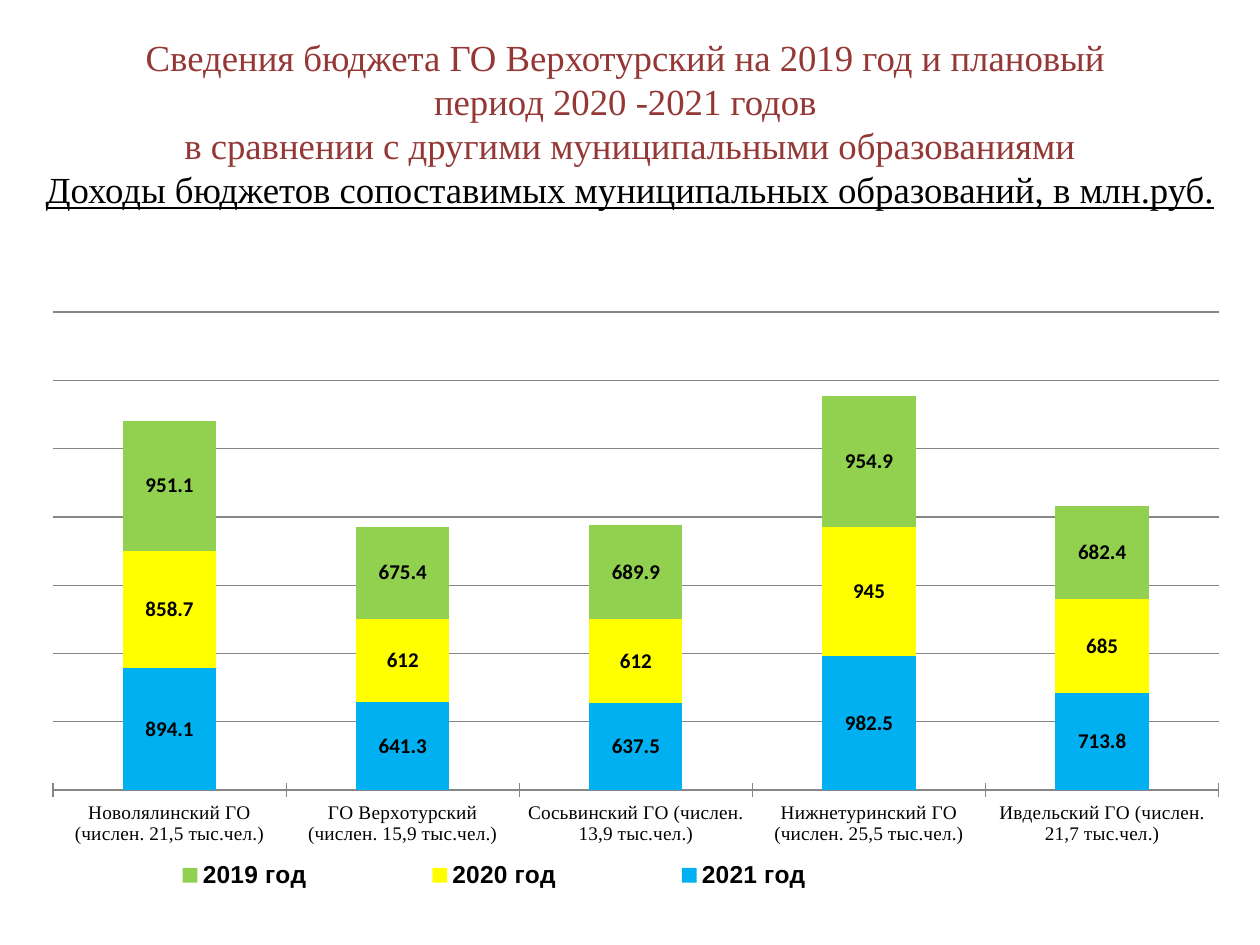
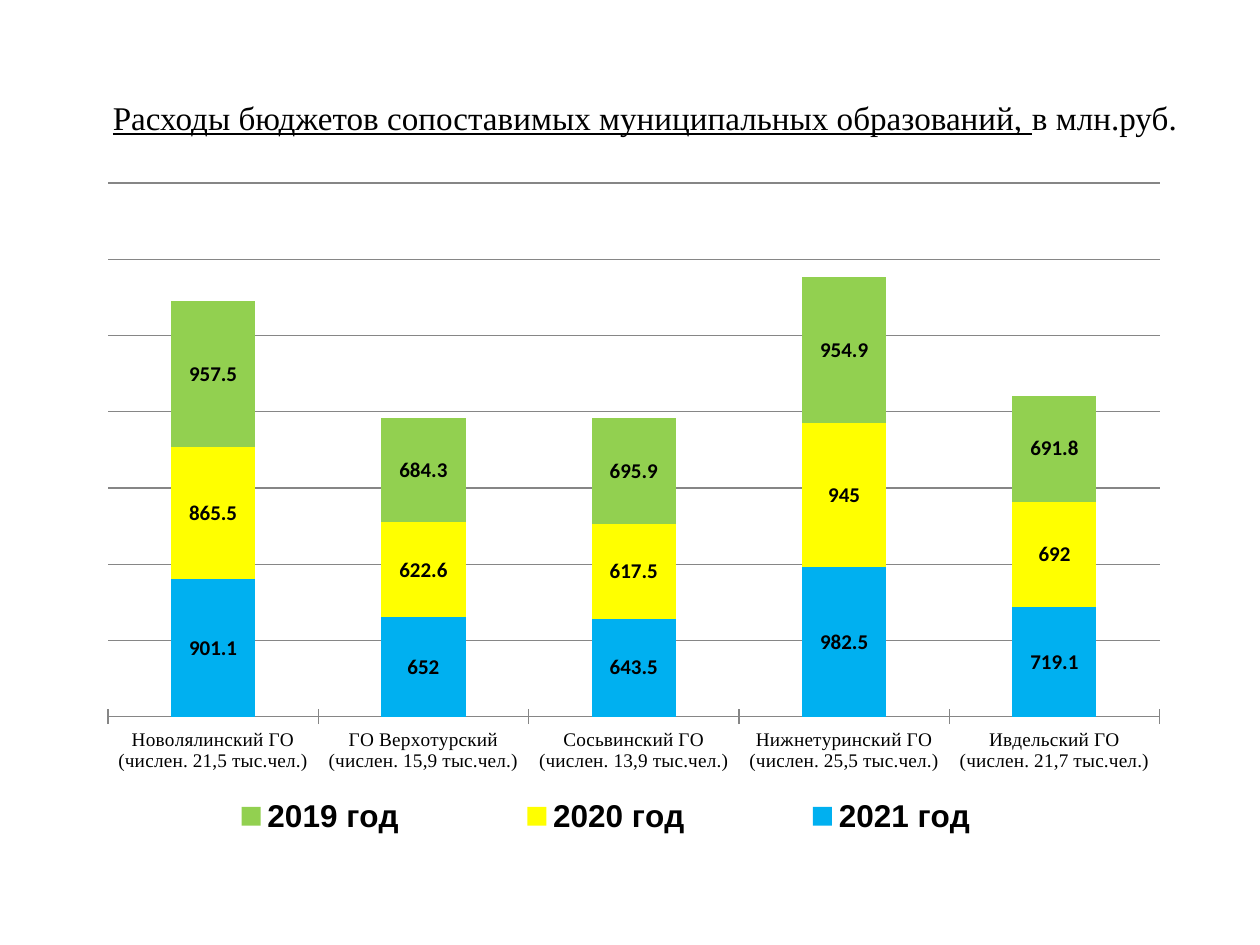
import dataclasses

import lxml.etree
import pptx
import pptx.chart.data
import pptx.dml.color
import pptx.enum.chart
import pptx.enum.text
import pptx.util

Pt = pptx.util.Pt
CHART_NS = "http://schemas.openxmlformats.org/drawingml/2006/chart"


@dataclasses.dataclass(frozen=True)
class Theme:
    ink: str = "000000"
    heading: str = "953735"
    rule: str = "868686"
    years: tuple = (("2021 год", "00B0F0"), ("2020 год", "FFFF00"), ("2019 год", "92D050"))
    title_face: str = "Times New Roman"
    value_face: str = "Calibri"
    legend_face: str = "Arial"
    axis_size: float = 11
    value_size: float = 12
    chart_size: float = 18
    rule_width: float = 0.75


THEME = Theme()

MUNICIPALITIES = [
    f"{name} (числен. {people} тыс.чел.)"
    for name, people in (
        ("Новолялинский ГО", "21,5"),
        ("ГО Верхотурский", "15,9"),
        ("Сосьвинский ГО", "13,9"),
        ("Нижнетуринский ГО", "25,5"),
        ("Ивдельский ГО", "21,7"),
    )
]

INCOME = [
    (894.1, 641.3, 637.5, 982.5, 713.8),
    (858.7, 612, 612, 945, 685),
    (951.1, 675.4, 689.9, 954.9, 682.4),
]

EXPENSES = [
    (901.1, 652, 643.5, 982.5, 719.1),
    (865.5, 622.6, 617.5, 945, 692),
    (957.5, 684.3, 695.9, 954.9, 691.8),
]


class Deck:
    def __init__(self, theme):
        self.theme = theme
        self.presentation = pptx.Presentation()
        self.presentation.slide_width = Pt(720)
        self.presentation.slide_height = Pt(540)
        self.slide = None

    def new_slide(self):
        self.slide = self.presentation.slides.add_slide(self.presentation.slide_layouts[6])

    def style(self, font, face, size, color=None, bold=False):
        font.name = face
        font.size = Pt(size)
        font.bold = bold
        font.color.rgb = pptx.dml.color.RGBColor.from_string(color or self.theme.ink)

    def rule(self, line):
        line.color.rgb = pptx.dml.color.RGBColor.from_string(self.theme.rule)
        line.width = Pt(self.theme.rule_width)

    def title(self, box, size, lines):
        frame = self.slide.shapes.add_textbox(*map(Pt, box)).text_frame
        frame.word_wrap = True
        frame.vertical_anchor = pptx.enum.text.MSO_ANCHOR.MIDDLE
        paragraph = frame.paragraphs[0]
        paragraph.alignment = pptx.enum.text.PP_ALIGN.CENTER
        for number, pieces in enumerate(lines):
            if number:
                paragraph.add_line_break()
            for words, color, underlined in pieces:
                run = paragraph.add_run()
                run.text = words
                self.style(run.font, self.theme.title_face, size, color)
                run.font.underline = underlined

    def place(self, parent, index, fractions):
        for old in parent.findall(f"{{{CHART_NS}}}layout"):
            parent.remove(old)
        layout = lxml.etree.Element(f"{{{CHART_NS}}}layout")
        manual = lxml.etree.SubElement(layout, f"{{{CHART_NS}}}manualLayout")
        settings = [("xMode", "edge"), ("yMode", "edge"), *zip("xywh", map(str, fractions))]
        for tag, value in settings:
            lxml.etree.SubElement(manual, f"{{{CHART_NS}}}{tag}", val=value)
        parent.insert(index, layout)

    def budget_chart(self, box, amounts, plot_area, legend_area, legend_size):
        theme = self.theme
        data = pptx.chart.data.CategoryChartData()
        data.categories = MUNICIPALITIES
        for (year, _), values in zip(theme.years, amounts):
            data.add_series(year, values)
        chart = self.slide.shapes.add_chart(
            pptx.enum.chart.XL_CHART_TYPE.COLUMN_STACKED, *map(Pt, box), data
        ).chart
        chart.has_title = False
        self.style(chart.font, theme.value_face, theme.chart_size)

        bars = chart.plots[0]
        bars.gap_width = 150
        bars.overlap = 100
        bars.vary_by_categories = False
        for series, (_, color) in zip(bars.series, theme.years):
            series.format.fill.solid()
            series.format.fill.fore_color.rgb = pptx.dml.color.RGBColor.from_string(color)
            series.data_labels.show_value = True
            self.style(series.data_labels.font, theme.value_face, theme.value_size, bold=True)

        towns = chart.category_axis
        towns.major_tick_mark = pptx.enum.chart.XL_TICK_MARK.CROSS
        self.style(towns.tick_labels.font, theme.title_face, theme.axis_size)
        self.rule(towns.format.line)

        millions = chart.value_axis
        millions.visible = False
        millions.minimum_scale = 0
        millions.maximum_scale = 3500
        millions.major_unit = 500
        millions.has_major_gridlines = True
        self.rule(millions.major_gridlines.format.line)

        chart.has_legend = True
        chart.legend.position = pptx.enum.chart.XL_LEGEND_POSITION.RIGHT
        chart.legend.include_in_layout = False
        self.style(chart.legend.font, theme.legend_face, legend_size, bold=True)

        self.place(chart.element.xpath("c:chart/c:plotArea")[0], 0, plot_area)
        self.place(chart.element.xpath("c:chart/c:legend")[0], 1, legend_area)


def main():
    deck = Deck(THEME)
    ink, heading = THEME.ink, THEME.heading

    deck.new_slide()
    deck.title(
        (16.5, 0, 687, 140.5),
        21,
        [
            [("Сведения бюджета ГО Верхотурский на 2019 год и плановый ", heading, False)],
            [("период 2020 -2021 годов ", heading, False)],
            [("в сравнении с другими муниципальными образованиями", heading, False)],
            [("Доходы бюджетов сопоставимых муниципальных образований, в млн.руб.", ink, True)],
        ],
    )
    deck.budget_chart(
        (11.5, 152, 697.5, 376.5), INCOME, (0.027, 0.07, 0.955, 0.808), (0.037, 0.89, 0.703, 0.07), 14
    )

    deck.new_slide()
    deck.title(
        (50.5, 22.5, 636, 67.5),
        18.9,
        [
            [],
            [
                ("Расходы бюджетов сопоставимых муниципальных образований, ", ink, True),
                ("в млн.руб.", ink, False),
            ],
        ],
    )
    deck.budget_chart(
        (44.5, 90, 636, 416), EXPENSES, (0.027, 0.035, 0.945, 0.808), (0.041, 0.86, 0.867, 0.09), 18
    )

    deck.presentation.save("out.pptx")


if __name__ == "__main__":
    main()
